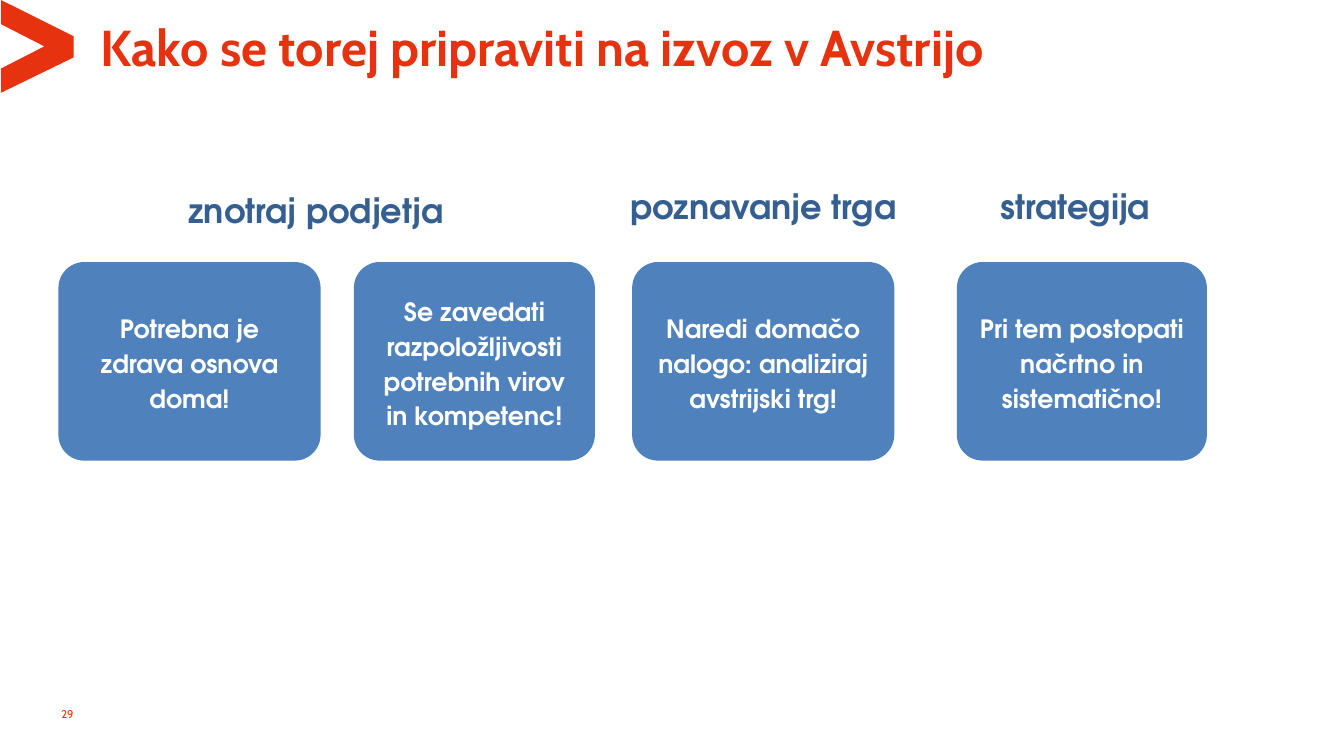
from pptx import Presentation
from pptx.dml.color import RGBColor
from pptx.enum.shapes import MSO_SHAPE
from pptx.enum.text import MSO_ANCHOR, PP_ALIGN
from pptx.util import Inches, Pt

ROUND = MSO_SHAPE.ROUNDED_RECTANGLE
TOP, MIDDLE, BOTTOM = MSO_ANCHOR.TOP, MSO_ANCHOR.MIDDLE, MSO_ANCHOR.BOTTOM
LEFT, CENTER, RIGHT = PP_ALIGN.LEFT, PP_ALIGN.CENTER, PP_ALIGN.RIGHT


def color(code):
    return RGBColor.from_string(code)


class Deck:
    red, blue, navy, white = "E6320F", "4F81BD", "365F91", "FFFFFF"
    main, body = "Cabin", "TeX Gyre Adventor"

    def __init__(self):
        self.prs = Presentation()
        self.prs.slide_width = Inches(13.33)
        self.prs.slide_height = Inches(7.5)
        self.slide = self.prs.slides.add_slide(self.prs.slide_layouts[6])

    def paint(self, shape, code):
        shape.shadow.inherit = False
        shape.fill.solid()
        shape.fill.fore_color.rgb = color(code)
        shape.line.fill.background()

    def label(self, shape, text, size, font, code, bold, align, anchor, pad=0):
        frame = shape.text_frame
        frame.word_wrap = True
        frame.vertical_anchor = anchor
        frame.margin_left = frame.margin_right = Inches(pad)
        frame.margin_top = frame.margin_bottom = 0
        para = frame.paragraphs[0]
        para.text = text
        para.alignment = align
        para.font.size = Pt(size)
        para.font.name = font
        para.font.bold = bold
        para.font.color.rgb = color(code)
        return para

    def text(self, area, text, size, font, code, bold=True, align=LEFT, anchor=TOP):
        box = self.slide.shapes.add_textbox(*map(Inches, area))
        self.label(box, text, size, font, code, bold, align, anchor)

    def outline(self, points, code):
        spots = [(Inches(x), Inches(y)) for x, y in points]
        form = self.slide.shapes.build_freeform(*spots[0])
        form.add_line_segments(spots[1:], close=True)
        self.paint(form.convert_to_shape(), code)

    def card(self, area, text):
        card = self.slide.shapes.add_shape(ROUND, *map(Inches, area))
        card.adjustments[0] = 0.13
        self.paint(card, self.blue)
        para = self.label(card, text, 18, self.body, self.white, True, CENTER, MIDDLE, 0.12)
        para.line_spacing = 1.15
        para.space_after = Pt(10)


def main():
    deck = Deck()
    deck.outline([(0.01, 0), (0.01, 0.24), (0.44, 0.46), (0.01, 0.68),
                  (0.01, 0.92), (0.73, 0.57), (0.73, 0.36)], deck.red)
    deck.text((1, 0.23, 10.3, 0.47), "Kako se torej pripraviti na izvoz v Avstrijo",
              36, deck.main, deck.red, anchor=MIDDLE)
    deck.text((0.13, 7, 0.6, 0.15), "29", 8, deck.main, deck.red,
              bold=False, align=RIGHT, anchor=BOTTOM)

    heads = [
        (1.87, 1.88, "znotraj podjetja"),
        (6.25, 1.84, "poznavanje trga"),
        (9.92, 1.84, "strategija"),
    ]
    for left, top, head in heads:
        deck.text((left, top, 2.9, 0.4), head, 24, deck.body, deck.navy)

    cards = [
        (0.58, 2.6, "Potrebna je zdrava osnova doma!"),
        (3.51, 2.39, "Se zavedati razpoložljivosti potrebnih virov in kompetenc!"),
        (6.27, 2.6, "Naredi domačo nalogo: analiziraj avstrijski trg!"),
        (9.49, 2.48, "Pri tem postopati načrtno in sistematično!"),
    ]
    for left, width, note in cards:
        deck.card((left, 2.6, width, 1.97), note)

    deck.prs.save("out.pptx")


if __name__ == "__main__":
    main()
